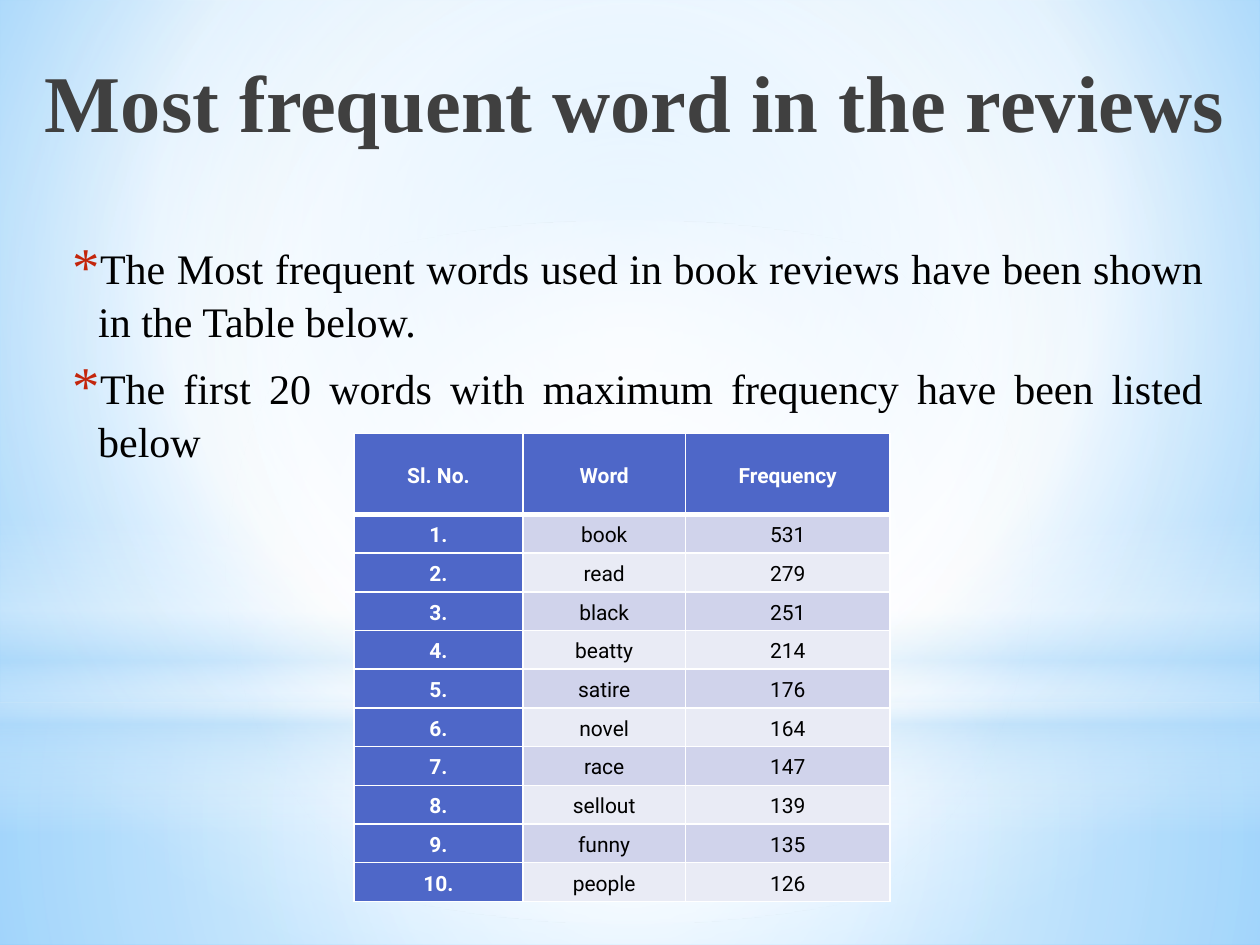
"""Build a slide with the ten most frequent words found in book reviews."""
from lxml.etree import SubElement
from pptx import Presentation
from pptx.dml.color import RGBColor
from pptx.enum.shapes import MSO_SHAPE
from pptx.enum.text import MSO_ANCHOR, PP_ALIGN
from pptx.oxml.ns import qn
from pptx.util import Cm, Pt

THEME = {
    "serif": "Times New Roman", "sans": "Roboto",
    "title_size": 46, "body_size": 24, "cell_size": 12,
    "title": "404040", "text": "000000", "light": "FFFFFF", "bullet": "C3260C",
    "accent": "4E67C8", "bands": ("D0D3EB", "E9EBF5"),
    "sky": "9ED5FF", "deep_sky": "5BB9FF", "haze": "B4DCFA",
}
WHITE, HAZE = THEME["light"], THEME["haze"]

TITLE = "Most frequent word in the reviews"
POINTS = [
    "The Most frequent words used in book reviews have been shown in the Table below.",
    "The first 20 words with maximum frequency have been listed below",
]
HEADERS = ["Sl. No.", "Word", "Frequency"]
WORDS = [
    ("book", 531), ("read", 279), ("black", 251), ("beatty", 214), ("satire", 176),
    ("novel", 164), ("race", 147), ("sellout", 139), ("funny", 135), ("people", 126),
]
COLUMNS = (3.4, 3.28, 4.12)
HEADER_HEIGHT, ROW_HEIGHT = 1.63, 0.78

SKY = [(0, THEME["sky"], 100), (60, WHITE, 100), (100, THEME["deep_sky"], 100)]
CENTRE = (50, 50, 50, 50)
BACKDROP = [
    (MSO_SHAPE.RECTANGLE, 14.17, 4.88, CENTRE,
     [(0, WHITE, 91), (37, WHITE, 76), (100, HAZE, 79)]),
    (MSO_SHAPE.RECTANGLE, 0, 14.17, CENTRE,
     [(0, WHITE, 89), (48, WHITE, 62), (100, HAZE, 79)]),
    (MSO_SHAPE.RECTANGLE, 10.46, 6.35, None,
     [(0, WHITE, 0), (29, WHITE, 30), (45, HAZE, 40), (55, WHITE, 26),
      (65, HAZE, 60), (100, WHITE, 0)]),
    (MSO_SHAPE.OVAL, 4.45, 14.17, CENTRE, [(0, WHITE, 100), (56, WHITE, 0)]),
]


def add(parent, tag, **attrs):
    return SubElement(parent, qn(tag), {k: str(v) for k, v in attrs.items()})


def paint_gradient(fill, element, stops, focus):
    fill.gradient()
    grad = next(element.iter(qn("a:gradFill")))
    for child in list(grad):
        grad.remove(child)
    gs_list = add(grad, "a:gsLst")
    for pos, color, alpha in stops:
        clr = add(add(gs_list, "a:gs", pos=pos * 1000), "a:srgbClr", val=color)
        if alpha < 100:
            add(clr, "a:alpha", val=alpha * 1000)
    if focus:
        sides = {side: value * 1000 for side, value in zip("ltrb", focus)}
        add(add(grad, "a:path", path="circle"), "a:fillToRect", **sides)
    else:
        add(grad, "a:lin", ang=90 * 60000, scaled=0)


def write(p, text, font, size, color, bold=False, align=PP_ALIGN.CENTER,
          before=0, after=0, spacing=None):
    p.alignment, p.line_spacing = align, spacing
    p.space_before, p.space_after = Pt(before), Pt(after)
    r = p.add_run()
    r.text = text
    r.font.name, r.font.size, r.font.bold = font, Pt(size), bold
    r.font.color.rgb = RGBColor.from_string(color)


def add_bullet(p):
    pPr = p._p.get_or_add_pPr()
    pPr.set("marL", str(Cm(0.64)))
    pPr.set("indent", str(Cm(-0.51)))
    add(add(pPr, "a:buClr"), "a:srgbClr", val=THEME["bullet"])
    add(pPr, "a:buSzPct", val=130000)
    add(pPr, "a:buFont", typeface=THEME["serif"])
    add(pPr, "a:buChar", char="*")


def add_borders(cell, bottom):
    tcPr = cell._tc.get_or_add_tcPr()
    for tag, width in (("a:lnL", 1), ("a:lnR", 1), ("a:lnT", 1), ("a:lnB", bottom)):
        ln = add(tcPr, tag, w=Pt(width))
        add(add(ln, "a:solidFill"), "a:srgbClr", val=WHITE)


def add_backdrop(prs, slide):
    paint_gradient(slide.background.fill, slide._element, SKY, (20, 10, 20, 60))
    for kind, top, height, focus, stops in BACKDROP:
        sp = slide.shapes.add_shape(kind, 0, Cm(top), prs.slide_width, Cm(height))
        sp.shadow.inherit = False
        sp.line.fill.background()
        paint_gradient(sp.fill, sp._element, stops, focus)


def add_title(slide):
    sp = slide.shapes.title
    slide.shapes._spTree.append(sp._element)
    sp.left, sp.top, sp.width, sp.height = Cm(0.61), Cm(0.74), Cm(24.31), Cm(2.57)
    tf = sp.text_frame
    tf.vertical_anchor = MSO_ANCHOR.MIDDLE
    write(tf.paragraphs[0], TITLE, THEME["serif"], THEME["title_size"],
          THEME["title"], bold=True, align=PP_ALIGN.RIGHT)


def add_points(slide):
    tf = slide.shapes.add_textbox(Cm(1.09), Cm(4.72), Cm(23.42), Cm(12.4)).text_frame
    tf.word_wrap = True
    for i, text in enumerate(POINTS):
        p = tf.add_paragraph() if i else tf.paragraphs[0]
        write(p, text, THEME["serif"], THEME["body_size"], THEME["text"],
              align=PP_ALIGN.JUSTIFY, before=4.8, after=3, spacing=1.05)
        add_bullet(p)


def add_word_table(slide):
    rows = [HEADERS] + [(f"{i}.", word, str(count))
                        for i, (word, count) in enumerate(WORDS, 1)]
    heights = [HEADER_HEIGHT] + [ROW_HEIGHT] * len(WORDS)
    table = slide.shapes.add_table(len(rows), len(COLUMNS), Cm(7.14), Cm(8.74),
                                   Cm(sum(COLUMNS)), Cm(sum(heights))).table
    for column, width in zip(table.columns, COLUMNS):
        column.width = Cm(width)
    for i, (values, height) in enumerate(zip(rows, heights)):
        table.rows[i].height = Cm(height)
        for j, text in enumerate(values):
            cell = table.cell(i, j)
            strong = i == 0 or j == 0
            cell.vertical_anchor = MSO_ANCHOR.MIDDLE
            cell.margin_left = cell.margin_right = Cm(0.18)
            cell.margin_top = cell.margin_bottom = 0
            add_borders(cell, bottom=1 if i else 3)
            cell.fill.solid()
            cell.fill.fore_color.rgb = RGBColor.from_string(
                THEME["accent"] if strong else THEME["bands"][(i - 1) % 2])
            write(cell.text_frame.paragraphs[0], text, THEME["sans"], THEME["cell_size"],
                  WHITE if strong else THEME["text"], bold=strong,
                  after=0 if i else 10, spacing=1.15)


def main():
    prs = Presentation()
    prs.slide_width, prs.slide_height = Cm(25.4), Cm(19.05)
    slide = prs.slides.add_slide(prs.slide_layouts[5])
    add_backdrop(prs, slide)
    add_title(slide)
    add_points(slide)
    add_word_table(slide)
    prs.save("out.pptx")


if __name__ == "__main__":
    main()
